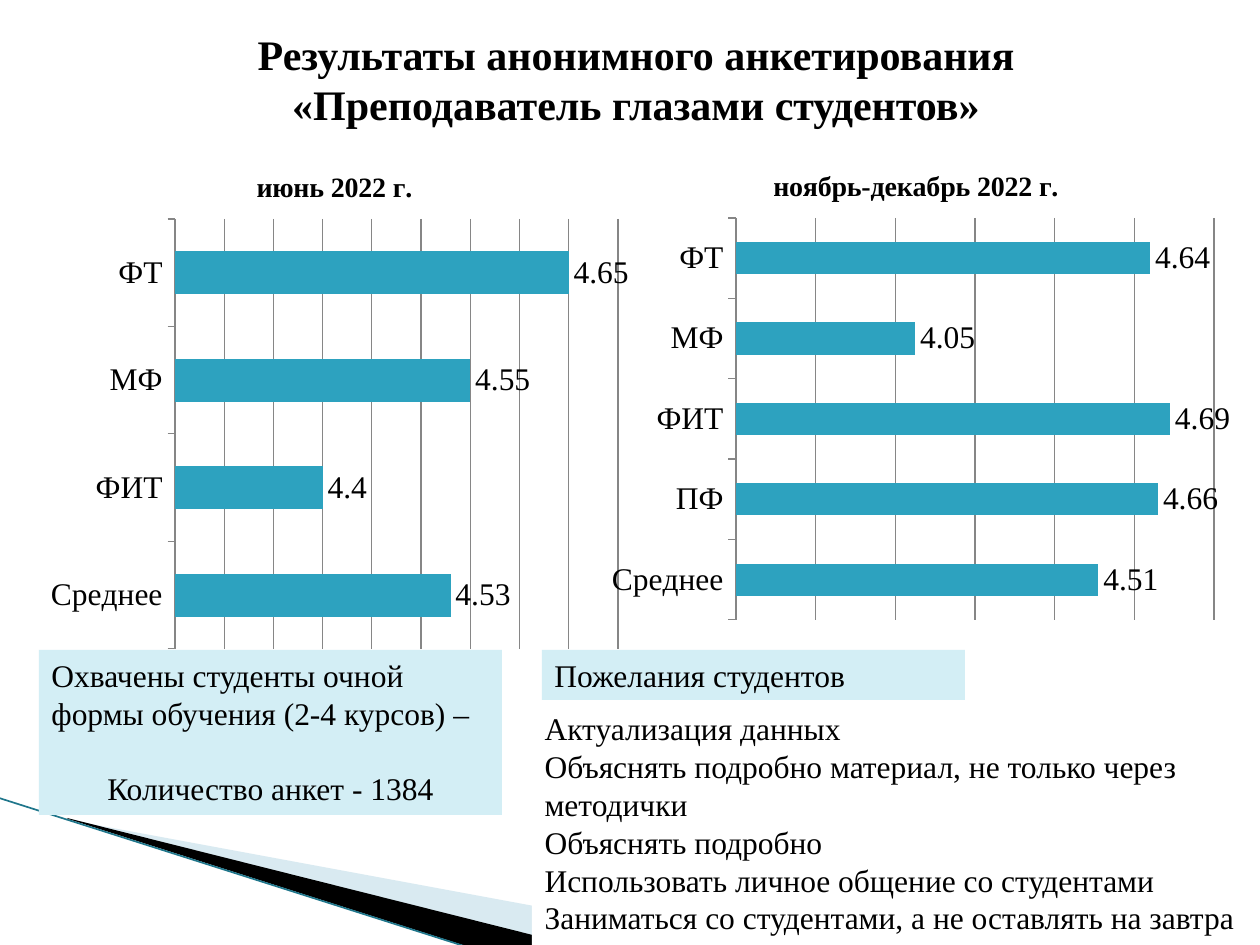
from dataclasses import dataclass

from lxml import etree
from pptx import Presentation
from pptx.chart.data import CategoryChartData
from pptx.dml.color import RGBColor
from pptx.enum.chart import XL_CHART_TYPE, XL_LABEL_POSITION, XL_TICK_MARK
from pptx.enum.shapes import MSO_CONNECTOR, MSO_SHAPE
from pptx.enum.text import MSO_ANCHOR, MSO_AUTO_SIZE, PP_ALIGN
from pptx.oxml import parse_xml
from pptx.oxml.ns import nsdecls, qn
from pptx.util import Emu, Pt

BAR = XL_CHART_TYPE.BAR_CLUSTERED
OUTSIDE_END = XL_LABEL_POSITION.OUTSIDE_END
TICK_OUTSIDE = XL_TICK_MARK.OUTSIDE
STRAIGHT = MSO_CONNECTOR.STRAIGHT
RECTANGLE = MSO_SHAPE.RECTANGLE
TOP, MIDDLE = MSO_ANCHOR.TOP, MSO_ANCHOR.MIDDLE
NO_AUTOFIT = MSO_AUTO_SIZE.NONE
LEFT, CENTER = PP_ALIGN.LEFT, PP_ALIGN.CENTER

BLACK = RGBColor(0x00, 0x00, 0x00)
WHITE = RGBColor(0xFF, 0xFF, 0xFF)
TEAL = RGBColor(0x2D, 0xA2, 0xBF)
DARK_TEAL = RGBColor(0x1F, 0x76, 0x8B)
PALE_BLUE = RGBColor(0xD3, 0xEE, 0xF5)
WEDGE_BLUE = RGBColor(0xA0, 0xCB, 0xDC)
GRID_GRAY = RGBColor(0x86, 0x86, 0x86)

PX_PER_INCH = 126
FONT = "Times New Roman"


def px(length: int) -> Emu:
    return Emu(round(length * 914400 / PX_PER_INCH))


@dataclass(frozen=True)
class Area:
    left: int
    top: int
    width: int
    height: int

    def emu(self) -> tuple[Emu, ...]:
        return tuple(px(v) for v in (self.left, self.top, self.width, self.height))


@dataclass(frozen=True)
class Survey:
    title: str
    area: Area
    plot: Area
    scores: dict[str, float]
    minimum: float
    maximum: float
    step: float


@dataclass(frozen=True)
class Line:
    text: str
    align: PP_ALIGN = LEFT
    space_before: int = 0


@dataclass(frozen=True)
class Wedge:
    points: tuple[tuple[int, int], ...]
    color: RGBColor
    opacity: int = 100


WEDGES = (
    Wedge(((69, 820), (750, 946), (575, 946), (69, 819)), WEDGE_BLUE, 40),
    Wedge(((67, 818), (576, 946), (469, 947), (68, 819)), BLACK),
)
SURVEYS = (
    Survey("июнь 2022 г.", Area(39, 147, 591, 512), Area(175, 219, 443, 430),
           {"Среднее": 4.53, "ФИТ": 4.4, "МФ": 4.55, "ФТ": 4.65}, 4.25, 4.7, 0.05),
    Survey("ноябрь-декабрь 2022 г.", Area(601, 147, 630, 483), Area(736, 218, 478, 402),
           {"Среднее": 4.51, "ПФ": 4.66, "ФИТ": 4.69, "МФ": 4.05, "ФТ": 4.64}, 3.6, 4.8, 0.2),
)
TITLE = "Результаты анонимного анкетирования\v«Преподаватель глазами студентов»"
COVERAGE = (
    Line("Охвачены студенты очной формы обучения (2-4 курсов) –"),
    Line("Количество анкет - 1384", CENTER, 21),
)
WISHES_HEADING = (Line("Пожелания студентов"),)
WISHES = (
    Line("Актуализация данных"),
    Line("Объяснять подробно материал, не только через методички"),
    Line("Объяснять подробно"),
    Line("Использовать личное общение со студентами"),
    Line("Заниматься со студентами, а не оставлять на завтра"),
)


def set_font(font, size: int, bold: bool = False) -> None:
    values = {"name": FONT, "size": Pt(size), "bold": bold}
    for name, value in values.items():
        setattr(font, name, value)
    font.color.rgb = BLACK


def place(shape, area: Area) -> None:
    for name, value in zip(("left", "top", "width", "height"), area.emu()):
        setattr(shape, name, value)


def write_lines(shape, lines: tuple[Line, ...], size: int, anchor=TOP, bold=False) -> None:
    frame = shape.text_frame
    values = {"word_wrap": True, "auto_size": NO_AUTOFIT, "vertical_anchor": anchor}
    for name, value in values.items():
        setattr(frame, name, value)
    for index, line in enumerate(lines):
        para = frame.add_paragraph() if index else frame.paragraphs[0]
        para.text = line.text
        para.alignment = line.align
        para.space_before = Pt(line.space_before)
        for span in para.runs:
            set_font(span.font, size, bold)


def remove_bullets(shape) -> None:
    for para in shape.text_frame.paragraphs:
        properties = para._p.get_or_add_pPr()
        properties.set("marL", "0")
        properties.set("indent", "0")
        etree.SubElement(properties, qn("a:buNone"))


def add_wedge(page, wedge: Wedge) -> None:
    first, *rest = [(px(x), px(y)) for x, y in wedge.points]
    builder = page.shapes.build_freeform(*first)
    builder.add_line_segments(rest, close=True)
    shape = builder.convert_to_shape()
    shape.shadow.inherit = False
    shape.fill.solid()
    shape.fill.fore_color.rgb = wedge.color
    shape.line.fill.background()
    if wedge.opacity < 100:
        color = shape._element.spPr.find(".//" + qn("a:srgbClr"))
        etree.SubElement(color, qn("a:alpha"), val=str(wedge.opacity * 1000))


def add_edge_line(page) -> None:
    line = page.shapes.add_connector(STRAIGHT, px(-1), px(798), px(467), px(947))
    line.line.color.rgb = DARK_TEAL
    line.line.width = Pt(0.95)
    etree.SubElement(line._element.spPr, qn("a:effectLst"))


def add_box(page, area: Area, lines: tuple[Line, ...]) -> None:
    box = page.shapes.add_shape(RECTANGLE, *area.emu())
    box.shadow.inherit = False
    box.fill.solid()
    box.fill.fore_color.rgb = PALE_BLUE
    box.line.fill.background()
    write_lines(box, lines, 18)


def set_plot_layout(chart, survey: Survey) -> None:
    """Fix the inner plot area as fractions of the chart."""
    area, plot = survey.area, survey.plot
    fractions = {
        "x": (plot.left - area.left) / area.width,
        "y": (plot.top - area.top) / area.height,
        "w": plot.width / area.width,
        "h": plot.height / area.height,
    }
    values = "".join(f'<c:{key} val="{value:.4f}"/>' for key, value in fractions.items())
    layout = parse_xml(
        f'<c:layout {nsdecls("c")}><c:manualLayout><c:layoutTarget val="inner"/>'
        f'<c:xMode val="edge"/><c:yMode val="edge"/>{values}</c:manualLayout></c:layout>')
    plot_area = chart._chartSpace.chart.plotArea
    for old in plot_area.findall(qn("c:layout")):
        plot_area.remove(old)
    plot_area.insert(0, layout)


def add_survey_chart(page, survey: Survey) -> None:
    data = CategoryChartData()
    data.categories = list(survey.scores)
    data.add_series("Series 1", list(survey.scores.values()))
    chart = page.shapes.add_chart(BAR, *survey.area.emu(), data).chart
    set_font(chart.font, 18)
    chart.has_legend = False
    chart.has_title = True
    chart.chart_title.include_in_layout = False
    title = chart.chart_title.text_frame
    title.text = survey.title
    set_font(title.paragraphs[0].runs[0].font, 16, True)

    chart.category_axis.major_tick_mark = TICK_OUTSIDE
    chart.category_axis.format.line.color.rgb = GRID_GRAY
    scale = {"minimum_scale": survey.minimum, "maximum_scale": survey.maximum,
             "major_unit": survey.step, "has_major_gridlines": True, "visible": False}
    for name, value in scale.items():
        setattr(chart.value_axis, name, value)
    chart.value_axis.major_gridlines.format.line.color.rgb = GRID_GRAY

    bars = chart.plots[0]
    bars.gap_width = 150
    bars.vary_by_categories = False
    bars.has_data_labels = True
    bars.data_labels.show_value = True
    bars.data_labels.position = OUTSIDE_END
    fill = bars.series[0].format.fill
    fill.solid()
    fill.fore_color.rgb = TEAL
    set_plot_layout(chart, survey)


def main() -> None:
    deck = Presentation()
    deck.slide_width, deck.slide_height = px(1260), px(945)
    page = deck.slides.add_slide(deck.slide_layouts[1])
    title, wishes = page.placeholders
    for wedge in WEDGES:
        add_wedge(page, wedge)
    add_edge_line(page)
    place(title, Area(69, 0, 1134, 158))
    write_lines(title, (Line(TITLE, CENTER),), 24, MIDDLE, True)
    for survey in SURVEYS:
        add_survey_chart(page, survey)
    add_box(page, Area(39, 650, 463, 165), COVERAGE)
    add_box(page, Area(542, 650, 423, 50), WISHES_HEADING)

    place(wishes, Area(532, 703, 728, 242))
    wishes.fill.solid()
    wishes.fill.fore_color.rgb = WHITE
    write_lines(wishes, WISHES, 18)
    remove_bullets(wishes)
    page.shapes._spTree.append(wishes._element)  # in front of the wedges
    deck.save("out.pptx")


if __name__ == "__main__":
    main()
